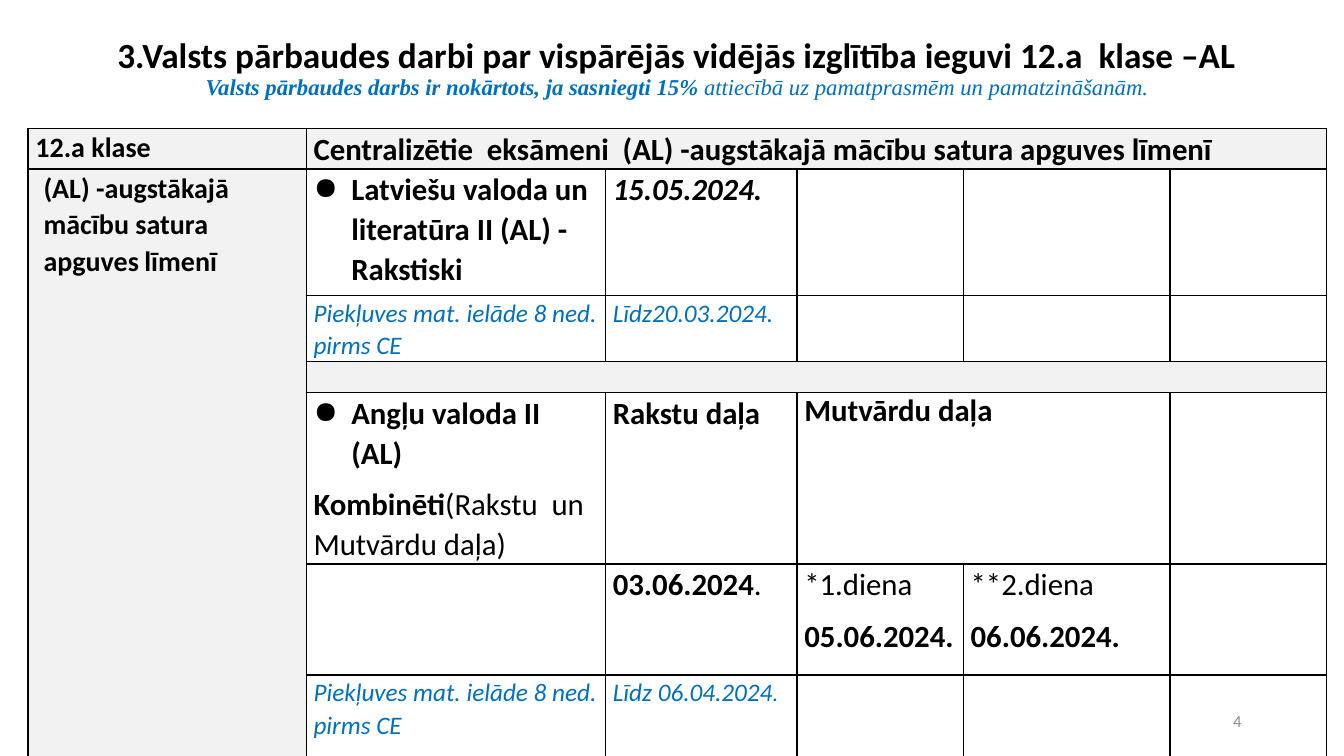
from lxml import etree
from pptx import Presentation
from pptx.dml.color import RGBColor
from pptx.enum.text import MSO_ANCHOR, PP_ALIGN
from pptx.oxml.ns import qn
from pptx.util import Pt

BLACK = RGBColor(0, 0, 0)
BLUE = RGBColor(0x00, 0x70, 0xC0)
GRAY = RGBColor(0x8C, 0x8C, 0x8C)
LIGHT = RGBColor(0xF2, 0xF2, 0xF2)
CENTER, RIGHT = PP_ALIGN.CENTER, PP_ALIGN.RIGHT
MIDDLE = MSO_ANCHOR.MIDDLE
TITLE_ONLY = 5

HEAD = dict(size=20, bold=True)
BODY = dict(size=22)
BOLD = dict(size=22, bold=True)
DATE = dict(size=22, bold=True, italic=True)
NOTE = dict(size=18, italic=True, color=BLUE)


class SlideBuilder:
    """Holds the style and the current slide; lengths are in points."""

    font = "Calibri"
    margin = 5.3
    line_spacing = 1.07
    space_after = 8

    def __init__(self, prs):
        self.slide = prs.slides.add_slide(prs.slide_layouts[TITLE_ONLY])

    def style(self, font, size, color=BLACK, bold=False, italic=False, name=None):
        font.name = name or self.font
        font.size = Pt(size)
        font.bold, font.italic = bold, italic
        font.color.rgb = color

    def runs(self, p, parts):
        """Add (text, style) parts; a single style goes on the paragraph."""
        for text, style in parts:
            r = p.add_run()
            r.text = text
            self.style(p.font if len(parts) == 1 else r.font, **style)

    def title(self, x, y, w, h, lines):
        sp = self.slide.shapes.title
        sp.left, sp.top, sp.width, sp.height = Pt(x), Pt(y), Pt(w), Pt(h)
        tf = sp.text_frame
        tf.vertical_anchor = MIDDLE
        tf.margin_bottom = Pt(8)
        p = tf.paragraphs[0]
        p.alignment, p.line_spacing = CENTER, 0.9
        for i, parts in enumerate(lines):
            if i:
                p.add_line_break()
            for text, style in parts:
                r = p.add_run()
                r.text = text
                self.style(r.font, **style)

    def text(self, x, y, w, h, text, align, **style):
        sp = self.slide.shapes.add_textbox(Pt(x), Pt(y), Pt(w), Pt(h))
        tf = sp.text_frame
        tf.word_wrap = True
        tf.vertical_anchor = MIDDLE
        p = tf.paragraphs[0]
        p.alignment = align
        self.runs(p, [(text, style)])

    def table(self, x, y, widths, heights):
        frame = self.slide.shapes.add_table(
            len(heights), len(widths), Pt(x), Pt(y), Pt(sum(widths)), Pt(sum(heights)))
        table = frame.table
        table.first_row = table.horz_banding = False
        for column, width in zip(table.columns, widths):
            column.width = Pt(width)
        for row, height in zip(table.rows, heights):
            row.height = Pt(height)
        for cell in table.iter_cells():
            self.border(cell)
            cell.fill.background()
            cell.margin_left = cell.margin_right = Pt(self.margin)
            cell.margin_top = cell.margin_bottom = 0
            cell.text_frame.paragraphs[0].line_spacing = self.line_spacing
        return table

    def border(self, cell):
        tc_pr = cell._tc.get_or_add_tcPr()
        for side in ("a:lnL", "a:lnR", "a:lnT", "a:lnB"):
            ln = etree.SubElement(tc_pr, qn(side), w=str(Pt(1)))
            fill = etree.SubElement(ln, qn("a:solidFill"))
            etree.SubElement(fill, qn("a:srgbClr"), val=str(BLACK))

    def cell(self, cell, *paragraphs):
        tf = cell.text_frame
        for i, parts in enumerate(paragraphs):
            p = tf.add_paragraph() if i else tf.paragraphs[0]
            p.line_spacing = self.line_spacing
            p.space_after = Pt(self.space_after)
            self.runs(p, parts)

    def indent(self, p, left, first=0, bullet=None, tab=None):
        p_pr = p._p.get_or_add_pPr()
        p_pr.set("marL", str(Pt(left)))
        p_pr.set("indent", str(Pt(first)))
        extras = []
        if bullet:
            extras.append(etree.Element(qn("a:buChar"), char=bullet))
        if tab:
            tabs = etree.Element(qn("a:tabLst"))
            etree.SubElement(tabs, qn("a:tab"), pos=str(Pt(tab)), algn="l")
            extras.append(tabs)
        default = p_pr.find(qn("a:defRPr"))
        for extra in extras:
            default.addprevious(extra)


def main():
    prs = Presentation()
    prs.slide_width, prs.slide_height = Pt(960), Pt(540)
    b = SlideBuilder(prs)

    # Title
    sub = dict(size=16.2, color=BLUE, italic=True, name="Times New Roman")
    b.title(20, 11, 927, 81, [
        [("3.Valsts pārbaudes darbi par vispārējās vidējās izglītība ieguvi 12.a  klase –AL",
          dict(size=25.2, bold=True))],
        [("Valsts pārbaudes darbs ir nokārtots, ja sasniegti 15% ", dict(sub, bold=True)),
         ("attiecībā uz pamatprasmēm un pamatzināšanām.", sub)],
    ])

    # Exam table
    table = b.table(20, 92, [198.7, 213.8, 136.8, 118.8, 147.6, 111.6],
                    [26.6, 90.7, 44.6, 21.6, 118, 79.2, 67.7])
    for first, last in [((0, 1), (0, 5)), ((1, 0), (6, 0)), ((3, 1), (3, 5)), ((4, 3), (4, 4))]:
        table.cell(*first).merge(table.cell(*last))
    for row, col in [(0, 0), (0, 1), (1, 0), (3, 1)]:
        table.cell(row, col).fill.solid()
        table.cell(row, col).fill.fore_color.rgb = LIGHT

    # Cell texts: each paragraph is a list of (text, style)
    access = [("Piekļuves mat. ielāde 8 ned. pirms CE", NOTE)]
    texts = {
        (0, 0): [[("12.a klase", HEAD)]],
        (0, 1): [[("Centralizētie  eksāmeni  (AL) -augstākajā mācību satura apguves līmenī", BOLD)]],
        (1, 0): [[("(AL) -augstākajā mācību satura apguves\tlīmenī", HEAD)]],
        (1, 1): [[("Latviešu valoda un literatūra II (AL) - Rakstiski", BOLD)]],
        (1, 2): [[("15.05.2024.", DATE)]],
        (2, 1): [access],
        (2, 2): [[("Līdz20.03.2024.", NOTE)]],
        (4, 1): [[("Angļu valoda II (AL)", BOLD)],
                 [("Kombinēti", BOLD), ("(Rakstu  un Mutvārdu daļa)", BODY)]],
        (4, 2): [[("Rakstu daļa", BOLD)]],
        (4, 3): [[("Mutvārdu daļa", BOLD)]],
        (5, 2): [[("03.06.2024", BOLD), (".", BODY)]],
        (5, 3): [[("*1.diena", BODY)], [("05.06.2024.", BOLD)]],
        (5, 4): [[("**2.diena", BODY)], [("06.06.2024.", BOLD)]],
        (6, 1): [access],
        (6, 2): [[("Līdz 06.04.2024", NOTE), (".", dict(NOTE, size=16))]],
    }
    for (row, col), paragraphs in texts.items():
        b.cell(table.cell(row, col), *paragraphs)

    # Indents, bullets and single spacing
    b.indent(table.cell(1, 0).text_frame.paragraphs[0], 5.8, tab=128.6)
    for row in (1, 4):
        b.indent(table.cell(row, 1).text_frame.paragraphs[0], 27, -27, bullet="●")
    table.cell(4, 3).text_frame.paragraphs[0].line_spacing = 1.0

    # Slide number
    b.text(678, 500.4, 216, 28.8, "4", RIGHT, size=12, color=GRAY)

    prs.save("out.pptx")


if __name__ == "__main__":
    main()
